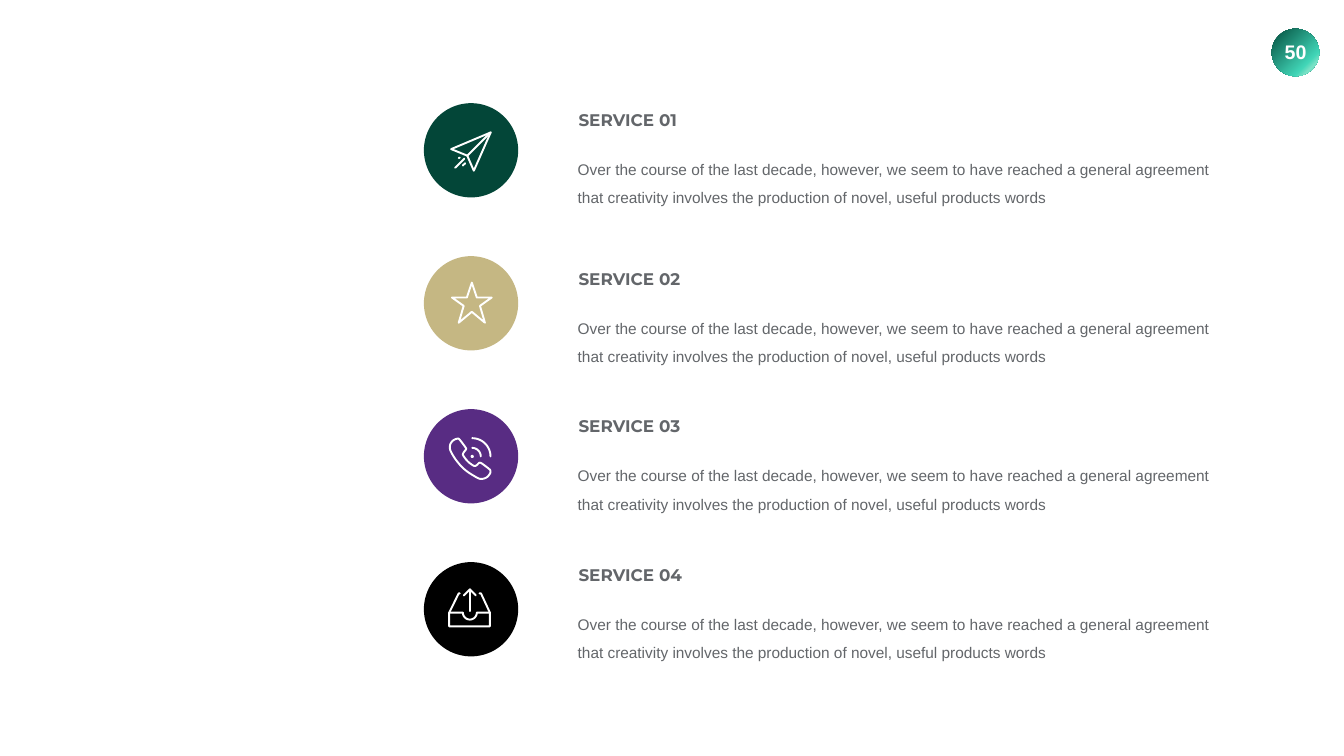
from dataclasses import dataclass
from math import cos, radians, sin

from lxml import etree
from pptx import Presentation
from pptx import util as u
from pptx.dml.color import RGBColor
from pptx.enum import shapes, text
from pptx.oxml.ns import qn


@dataclass(frozen=True)
class Theme:
    grey: str = "63666A"
    white: str = "FFFFFF"
    badge: tuple = ((0, "024C3C"), (74, "42D6B8"), (83, "7FE3C8"), (100, "28CCAC"))
    body_font: str = "Arial"
    heading_font: str = "Montserrat"
    body_size: float = 22
    heading_size: float = 24
    number_size: float = 28
    leading: float = 40.4
    stroke: float = 2.75


THEME = Theme()


def arc(x, y, radius, start, end, steps=24):
    """Points on an arc, angles in degrees clockwise from the right."""
    angles = [radians(start + (end - start) * i / steps) for i in range(steps + 1)]
    return [(x + radius * cos(a), y + radius * sin(a)) for a in angles]


def rounded(points, rounds=2):
    """Cut the corners of a closed outline until it looks smooth."""
    for _ in range(rounds):
        pairs = zip(points, points[1:] + points[:1])
        points = [(a[0] + (b[0] - a[0]) * t, a[1] + (b[1] - a[1]) * t)
                  for a, b in pairs for t in (0.25, 0.75)]
    return points


PAGE_NUMBER = "50"
DESCRIPTION = (
    "Over the course of the last decade, however, we seem to have reached a general "
    "agreement that creativity involves the production of novel, useful products words"
)

# Icon strokes: (points in millimetres from the disc centre, closed)
PLANE = [
    ([(9.9, -9), (-10, -0.6), (-1.9, 2.7), (1.4, 10.3)], True),
    ([(-1.9, 2.7), (9.9, -9)], False),
    ([(-8, 8.8), (-3.4, 4.2)], False),
    ([(-4.2, 7.7), (-2.9, 6.5)], False),
    ([(-6.2, 3.9), (-5.7, 3.7)], False),
]
STAR_HALF = [(0, -10.4), (2.5, -2.9), (10, -2.9), (4.1, 1.3), (6.6, 9.8), (0, 4.3)]
STAR_OUTLINE = STAR_HALF + [(-x, y) for x, y in STAR_HALF[-2:0:-1]]
STAR = [([(x + 0.4, y) for x, y in STAR_OUTLINE], True)]
HANDSET = [
    (-10.8, -4.4), (-10.3, -2.4), (-7.5, 2.2), (-3.2, 7), (3.2, 11), (5.2, 11.6),
    (8, 10.8), (9.8, 8.5), (9.8, 7.2), (9.3, 6.5), (5.2, 3.4), (4.4, 3.2),
    (3.9, 3.4), (2.7, 4.7), (1.7, 5), (0.6, 4.4), (-1.7, 2.7), (-3.7, 0.1),
    (-4.2, -0.9), (-3.8, -1.9), (-2.7, -3.2), (-2.4, -3.7), (-2.7, -4.4),
    (-6, -8.8), (-6.7, -9), (-8.8, -8.3), (-10.4, -6.5),
]
PHONE = [
    (rounded(HANDSET), True),
    (arc(0.6, 0.1, 0.3, 0, 360), True),
    (arc(0.6, 0.1, 4.3, -90, 0), False),
    (arc(0.6, 0.1, 9.2, -90, 0), False),
]
TRAY = [
    ([(-5.7, -8), (-6.2, -8), (-11, 1.7), (-11, 8.6),
      (9.5, 8.6), (9.5, 1.7), (5, -8), (4.3, -8)], False),
    ([(-11, 1.7), *arc(-0.6, 1.7, 3.5, 180, 0), (9.5, 1.7)], False),
    ([(-0.6, 0.9), (-0.6, -10)], False),
    ([(-3.6, -7), (-0.6, -10), (2.4, -7)], False),
]

# (heading, top of heading in cm, disc colour, icon)
SERVICES = [
    ("SERVICE 01", 5.38, "034638", PLANE),
    ("SERVICE 02", 13.42, "C5B783", STAR),
    ("SERVICE 03", 20.84, "582C83", PHONE),
    ("SERVICE 04", 28.32, "000000", TRAY),
]

# Layout in centimetres
SLIDE_SIZE = (67.72, 38.1)
DISC_LEFT, DISC_TOP, DISC_SIZE, DISC_PITCH = 21.36, 5.2, 4.75, 7.71
HEADING_LEFT, HEADING_SIZE = 28.9, (6.2, 1.27)
BODY_LEFT, BODY_SIZE, BODY_DROP = 28.5, (33.32, 3.3), 1.88
BADGE_BOX = (64.08, 1.45, 2.39, 2.39)
NUMBER_BOX = (64.16, 1.75, 2.24, 1.7)


def add_text(slide, content, box, *, font, size, color, bold=False, align="LEFT",
             anchor="TOP", margins=(0.25, 0.13), leading=None):
    shape = slide.shapes.add_textbox(*map(u.Cm, box))
    frame = shape.text_frame
    frame.word_wrap = True
    frame.vertical_anchor = getattr(text.MSO_ANCHOR, anchor)
    frame.margin_left = frame.margin_right = u.Cm(margins[0])
    frame.margin_top = frame.margin_bottom = u.Cm(margins[1])
    paragraph = frame.paragraphs[0]
    paragraph.alignment = getattr(text.PP_ALIGN, align)
    if leading:
        paragraph.line_spacing = u.Pt(leading)
    run = paragraph.add_run()
    run.text = content
    run.font.name, run.font.size, run.font.bold = font, u.Pt(size), bold
    run.font.color.rgb = RGBColor.from_string(color)


def add_disc(slide, box, color):
    shape = slide.shapes.add_shape(shapes.MSO_SHAPE.OVAL, *map(u.Cm, box))
    shape.shadow.inherit = False
    shape.line.fill.background()
    shape.fill.solid()
    shape.fill.fore_color.rgb = RGBColor.from_string(color)
    return shape


def set_gradient(shape, stops, clockwise_angle):
    shape.fill.gradient()
    shape.fill.gradient_angle = 360 - clockwise_angle
    stop_list = shape.element.spPr.find(qn("a:gradFill")).find(qn("a:gsLst"))
    for old_stop in list(stop_list):
        stop_list.remove(old_stop)
    for percent, color in stops:
        stop = etree.SubElement(stop_list, qn("a:gs"), pos=str(percent * 1000))
        etree.SubElement(stop, qn("a:srgbClr"), val=color)


def add_icon(slide, strokes, center_x, center_y):
    for points, closed in strokes:
        vertices = [(u.Cm(center_x + x / 10), u.Cm(center_y + y / 10)) for x, y in points]
        builder = slide.shapes.build_freeform(*vertices[0])
        builder.add_line_segments(vertices[1:], close=closed)
        shape = builder.convert_to_shape()
        shape.shadow.inherit = False
        shape.fill.background()
        shape.line.color.rgb = RGBColor.from_string(THEME.white)
        shape.line.width = u.Pt(THEME.stroke)
        shape.element.spPr.find(qn("a:ln")).set("cap", "rnd")


def add_service(slide, index, heading, heading_top, color, icon):
    disc_top = DISC_TOP + index * DISC_PITCH
    add_disc(slide, (DISC_LEFT, disc_top, DISC_SIZE, DISC_SIZE), color)
    add_icon(slide, icon, DISC_LEFT + DISC_SIZE / 2, disc_top + DISC_SIZE / 2)
    add_text(slide, heading, (HEADING_LEFT, heading_top, *HEADING_SIZE),
             font=THEME.heading_font, size=THEME.heading_size, color=THEME.grey,
             bold=True, anchor="MIDDLE")
    add_text(slide, DESCRIPTION, (BODY_LEFT, heading_top + BODY_DROP, *BODY_SIZE),
             font=THEME.body_font, size=THEME.body_size, color=THEME.grey,
             margins=(0.61, 0.3), leading=THEME.leading)


def main():
    presentation = Presentation()
    presentation.slide_width, presentation.slide_height = map(u.Cm, SLIDE_SIZE)
    slide = presentation.slides.add_slide(presentation.slide_layouts[6])
    badge = add_disc(slide, BADGE_BOX, THEME.white)
    set_gradient(badge, THEME.badge, 45)
    add_text(slide, PAGE_NUMBER, NUMBER_BOX, font=THEME.body_font,
             size=THEME.number_size, color=THEME.white, bold=True,
             align="CENTER", anchor="MIDDLE")
    for index, service in enumerate(SERVICES):
        add_service(slide, index, *service)
    presentation.save("out.pptx")


if __name__ == "__main__":
    main()
